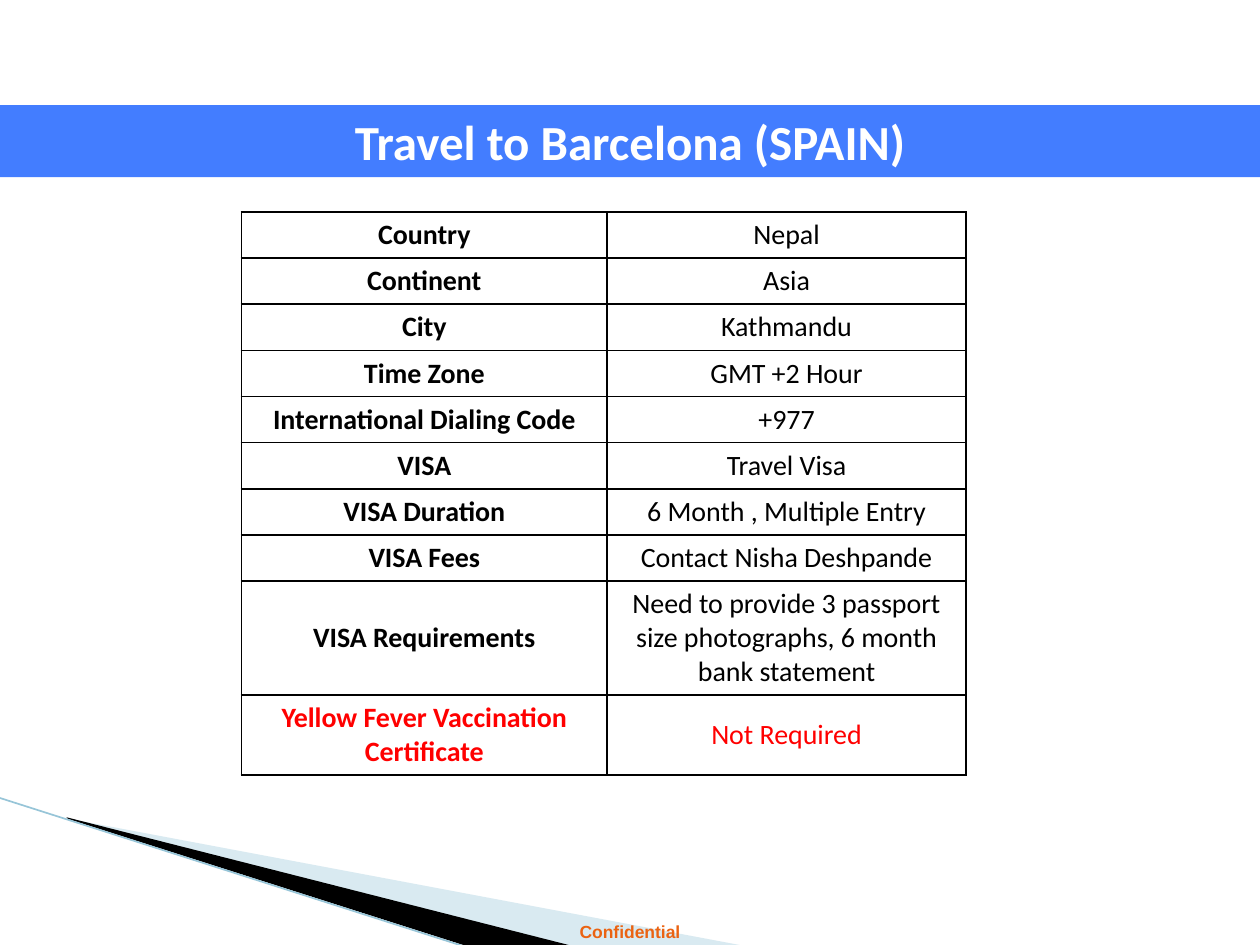
import pptx
import pptx.util
import pptx.dml.color
import pptx.enum.shapes
import pptx.enum.text
import pptx.oxml
import pptx.oxml.ns
from lxml import etree

Pt = pptx.util.Pt
MIDDLE = pptx.enum.text.MSO_ANCHOR.MIDDLE

THEME = {
    "band": "437DFF", "on_band": "FFFFFF", "text": "000000", "alert": "FF0000",
    "footer": "EB6312", "pale": "A0CBDC", "dark": "000000", "edge": "97C5D8",
    "body_font": "Calibri", "footer_font": "Arial",
    "title_size": 28, "table_size": 16, "footer_size": 10,
}

TITLE = "Travel to Barcelona (SPAIN)"
FOOTER = "Confidential"

# label, value, lines of text in the row
FACTS = [
    ("Country", "Nepal", 1),
    ("Continent", "Asia", 1),
    ("City", "Kathmandu", 1),
    ("Time Zone", "GMT +2 Hour", 1),
    ("International Dialing Code", "+977", 1),
    ("VISA", "Travel Visa", 1),
    ("VISA Duration", "6 Month , Multiple Entry", 1),
    ("VISA Fees", "Contact Nisha Deshpande", 1),
    ("VISA Requirements",
     "Need to provide 3 passport size photographs, 6 month bank statement", 3),
    ("Yellow Fever Vaccination Certificate", "Not Required", 2),
]
ALERT_ROW = len(FACTS) - 1

PAGE_WIDTH, PAGE_HEIGHT = 720, 540
TABLE_LEFT, TABLE_TOP = 138, 121
COLUMN_WIDTHS = (209, 205)
ROW_HEIGHT, LINE_HEIGHT, CELL_MARGIN = 26.4, 19.3, 3.1

# colour, opacity in percent, corners
SWOOSHES = [
    ("pale", 40, [(39.6, 468.5), (428.4, 540.7), (328.3, 540.7), (39.6, 468)]),
    ("dark", 100, [(38.2, 467.3), (329, 540.7), (267.8, 541.4), (38.9, 468)]),
]
EDGE = (-0.7, 455.8, 267.1, 541.4)


def rgb(name):
    return pptx.dml.color.RGBColor.from_string(THEME[name])


def write(frame, text, size, color, font="body_font", bold=False):
    frame.word_wrap = True
    para = frame.paragraphs[0]
    para.alignment = pptx.enum.text.PP_ALIGN.CENTER
    span = para.add_run()
    span.text = text
    span.font.name = THEME[font]
    span.font.size = Pt(THEME[size])
    span.font.bold = bold
    span.font.color.rgb = rgb(color)


def place(shape, left, top, width, height):
    shape.left, shape.top = Pt(left), Pt(top)
    shape.width, shape.height = Pt(width), Pt(height)


def add_swoosh(page, color, opacity, corners):
    builder = page.shapes.build_freeform(*corners[0], scale=Pt(1))
    builder.add_line_segments(corners[1:], close=True)
    shape = builder.convert_to_shape()
    shape.shadow.inherit = False
    shape.line.fill.background()
    shape.fill.solid()
    shape.fill.fore_color.rgb = rgb(color)
    if opacity < 100:
        tint = shape.fill._xPr.find(".//" + pptx.oxml.ns.qn("a:srgbClr"))
        etree.SubElement(tint, pptx.oxml.ns.qn("a:alpha"), val=str(opacity * 1000))


def add_edge(page):
    edge = page.shapes.add_connector(
        pptx.enum.shapes.MSO_CONNECTOR.STRAIGHT, *map(Pt, EDGE))
    edge.line.color.rgb = rgb("edge")
    edge.line.width = Pt(0.95)
    etree.SubElement(edge._element.spPr, pptx.oxml.ns.qn("a:effectLst"))


def add_borders(cell):
    properties = cell._tc.get_or_add_tcPr()
    for side in ("lnL", "lnR", "lnT", "lnB"):
        line = etree.SubElement(
            properties, pptx.oxml.ns.qn("a:" + side), w=str(Pt(1)))
        fill = etree.SubElement(line, pptx.oxml.ns.qn("a:solidFill"))
        etree.SubElement(fill, pptx.oxml.ns.qn("a:srgbClr"), val=THEME["text"])


def add_facts(page):
    heights = [ROW_HEIGHT + (lines - 1) * LINE_HEIGHT for *_, lines in FACTS]
    table = page.shapes.add_table(
        len(FACTS), len(COLUMN_WIDTHS), Pt(TABLE_LEFT), Pt(TABLE_TOP),
        Pt(sum(COLUMN_WIDTHS)), Pt(sum(heights))).table
    table.first_row = table.horz_banding = False
    for column, width in zip(table.columns, COLUMN_WIDTHS):
        column.width = Pt(width)
    for index, (label, value, _) in enumerate(FACTS):
        table.rows[index].height = Pt(heights[index])
        color = "alert" if index == ALERT_ROW else "text"
        for position, text in enumerate((label, value)):
            cell = table.cell(index, position)
            cell.vertical_anchor = MIDDLE
            cell.margin_top = cell.margin_bottom = Pt(CELL_MARGIN)
            add_borders(cell)
            cell.fill.background()
            write(cell.text_frame, text, "table_size", color, bold=position == 0)


def main():
    deck = pptx.Presentation()
    deck.slide_width, deck.slide_height = Pt(PAGE_WIDTH), Pt(PAGE_HEIGHT)
    page = deck.slides.add_slide(deck.slide_layouts.get_by_name("Title Only"))

    for swoosh in SWOOSHES:
        add_swoosh(page, *swoosh)
    add_edge(page)

    footer = page.shapes.add_textbox(0, Pt(522.7), Pt(PAGE_WIDTH), Pt(19.4))
    write(footer.text_frame, FOOTER, "footer_size", "footer",
          font="footer_font", bold=True)

    title = page.shapes.title
    place(title, 0, 60, PAGE_WIDTH, 41.2)
    title.fill.solid()
    title.fill.fore_color.rgb = rgb("band")
    title.text_frame.auto_size = pptx.enum.text.MSO_AUTO_SIZE.NONE
    title.text_frame.vertical_anchor = MIDDLE
    write(title.text_frame, TITLE, "title_size", "on_band", bold=True)

    add_facts(page)
    deck.save("out.pptx")


if __name__ == "__main__":
    main()
